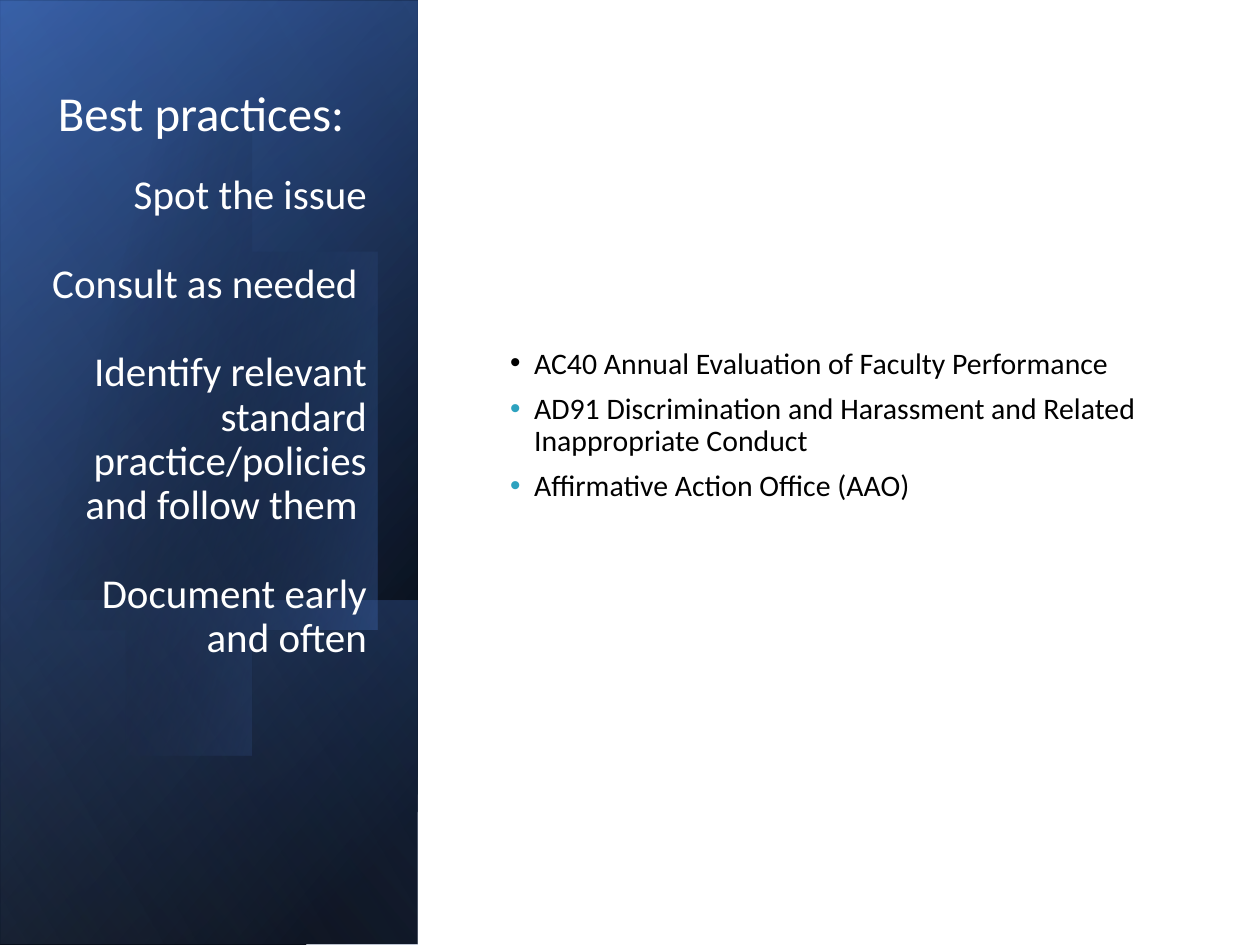
from pptx import Presentation
from pptx import util as u
from pptx.dml.color import RGBColor
from pptx.enum import shapes, text
from pptx.oxml import parse_xml
from pptx.oxml.ns import nsdecls, qn

WHITE = RGBColor(0xFF, 0xFF, 0xFF)
BLACK = RGBColor(0, 0, 0)
NAVY = RGBColor(0x2F, 0x55, 0x97)
BLUE = RGBColor(0x44, 0x72, 0xC4)
PALE_BLUE = RGBColor(0x8F, 0xAA, 0xDC)
TEAL = RGBColor(0x2D, 0xA2, 0xBF)
FONT = "Calibri"
RIGHT, LEFT = text.PP_ALIGN.RIGHT, text.PP_ALIGN.LEFT

PANELS = [
    ((-2.09, 2.09, 7.5, 3.31), 50, [(8, BLACK, 100), (100, NAVY, 100)]),
    ((-2.09, 2.11, 7.5, 3.31), 30, [(0, BLACK, 0), (99, BLUE, 46)]),
    ((0.29, 4.48, 2.74, 3.31), 130, [(2, BLUE, 29), (100, BLACK, 30)]),
]
SHEEN = ((-2.09, 2.08, 7.5, 3.31), 120, [(0, BLACK, 0), (99, PALE_BLUE, 11)])

GLOW_START = (0.96, 1.14)
GLOW_CURVES = [
    [(1.71, 1.22), (2.44, 1.92), (2.73, 2.9)],
    [(3.07, 4.12), (2.62, 5.31), (1.71, 5.57)],
    [(1.14, 5.74), (0.53, 5.5), (0.07, 5)],
    [(-0.03, 4.88)],
    [(-0.25, 1.66)],
    [(-0.15, 1.54)],
    [(0.02, 1.37), (0.22, 1.25), (0.45, 1.18)],
    [(0.62, 1.13), (0.79, 1.12), GLOW_START],
]

PRACTICES = [
    ("Best practices:", 27.9, 0, 0.18),
    ("Spot the issue", 23.4, 18.6, 0),
    ("Consult as needed ", 23.4, 25.4, 0),
    ("Identify relevant standard practice/policies and follow them ", 23.4, 25.4, 0),
    ("Document early and often", 23.4, 25.4, 0),
]
POLICIES = [
    ("AC40 Annual Evaluation of Faculty Performance", BLACK),
    ("AD91 Discrimination and Harassment and Related Inappropriate Conduct", TEAL),
    ("Affirmative Action Office (AAO)", TEAL),
]


def set_attrs(obj, **values):
    for name, value in values.items():
        setattr(obj, name, value)


def plain(sp):
    sp.shadow.inherit = False
    sp.line.fill.background()


def fill_gradient(sp, angle, stops):
    plain(sp)
    sp.fill.background()
    gs = "".join(
        f'<a:gs pos="{pos * 1000}"><a:srgbClr val="{color}">'
        f'<a:alpha val="{alpha * 1000}"/></a:srgbClr></a:gs>'
        for pos, color, alpha in stops)
    grad = parse_xml(
        f'<a:gradFill {nsdecls("a")} rotWithShape="1"><a:gsLst>{gs}</a:gsLst>'
        f'<a:lin ang="{angle * 60000}" scaled="0"/></a:gradFill>')
    props = sp._element.spPr
    props.replace(props.find(qn("a:noFill")), grad)


def add_rect(s, box):
    return s.shapes.add_shape(shapes.MSO_SHAPE.RECTANGLE, *map(u.Inches, box))


def add_panel(s, box, angle, stops):
    sp = add_rect(s, box)
    sp.rotation = 90
    sp._element.spPr.find(qn("a:xfrm")).set("flipH", "1")
    fill_gradient(sp, angle, stops)


def curve_points(points, steps=16):
    a, b, c, d = points
    for i in range(1, steps + 1):
        t = i / steps
        v = 1 - t
        yield tuple(v**3 * a[k] + 3 * v * v * t * b[k] + 3 * v * t * t * c[k] + t**3 * d[k]
                    for k in (0, 1))


def add_glow(s):
    outline = [GLOW_START]
    for part in GLOW_CURVES:
        outline += curve_points([outline[-1], *part]) if len(part) == 3 else part
    fb = s.shapes.build_freeform(*GLOW_START, scale=u.Inches(1))
    fb.add_line_segments(outline[1:], close=True)
    fill_gradient(fb.convert_to_shape(), 14, [(29, BLACK, 0), (100, BLUE, 43)])


def add_text_box(s, box, anchor, bottom):
    tf = s.shapes.add_textbox(*map(u.Inches, box)).text_frame
    set_attrs(tf, word_wrap=True, vertical_anchor=anchor, margin_bottom=u.Inches(bottom))
    return tf


def add_paragraph(tf, words, size, color, align, before):
    p = tf.paragraphs[0] if not tf.paragraphs[0].runs else tf.add_paragraph()
    set_attrs(p, alignment=align, line_spacing=0.9, space_before=u.Pt(before))
    r = p.add_run()
    r.text = words
    set_attrs(r.font, name=FONT, size=u.Pt(size))
    r.font.color.rgb = color
    return p._p.get_or_add_pPr()


def add_bullet(props, color):
    props.set("marL", str(u.Inches(0.19)))
    props.set("indent", str(-u.Inches(0.19)))
    for xml in (f'<a:buClr {nsdecls("a")}><a:srgbClr val="{color}"/></a:buClr>',
                f'<a:buFont {nsdecls("a")} typeface="Arial"/>',
                f'<a:buChar {nsdecls("a")} char="•"/>'):
        props.append(parse_xml(xml))


def main():
    prs = Presentation()
    set_attrs(prs, slide_width=u.Inches(10), slide_height=u.Inches(7.5))
    s = prs.slides.add_slide(prs.slide_layouts[6])

    backdrop = add_rect(s, (0, 0, 10, 7.5))
    plain(backdrop)
    backdrop.fill.solid()
    backdrop.fill.fore_color.rgb = WHITE

    for panel in PANELS:
        add_panel(s, *panel)
    add_glow(s)
    add_panel(s, *SHEEN)

    tf = add_text_box(s, (0.25, 0.64, 2.76, 4.94), text.MSO_ANCHOR.BOTTOM, 0.33)
    for words, size, before, right in PRACTICES:
        props = add_paragraph(tf, words, size, WHITE, RIGHT, before)
        props.set("marR", str(u.Inches(right)))

    tf = add_text_box(s, (3.95, 0.71, 5.38, 6.07), text.MSO_ANCHOR.MIDDLE, 0.78)
    for words, bullet in POLICIES:
        add_bullet(add_paragraph(tf, words, 17, BLACK, LEFT, 7.5), bullet)

    prs.save("out.pptx")


if __name__ == "__main__":
    main()
